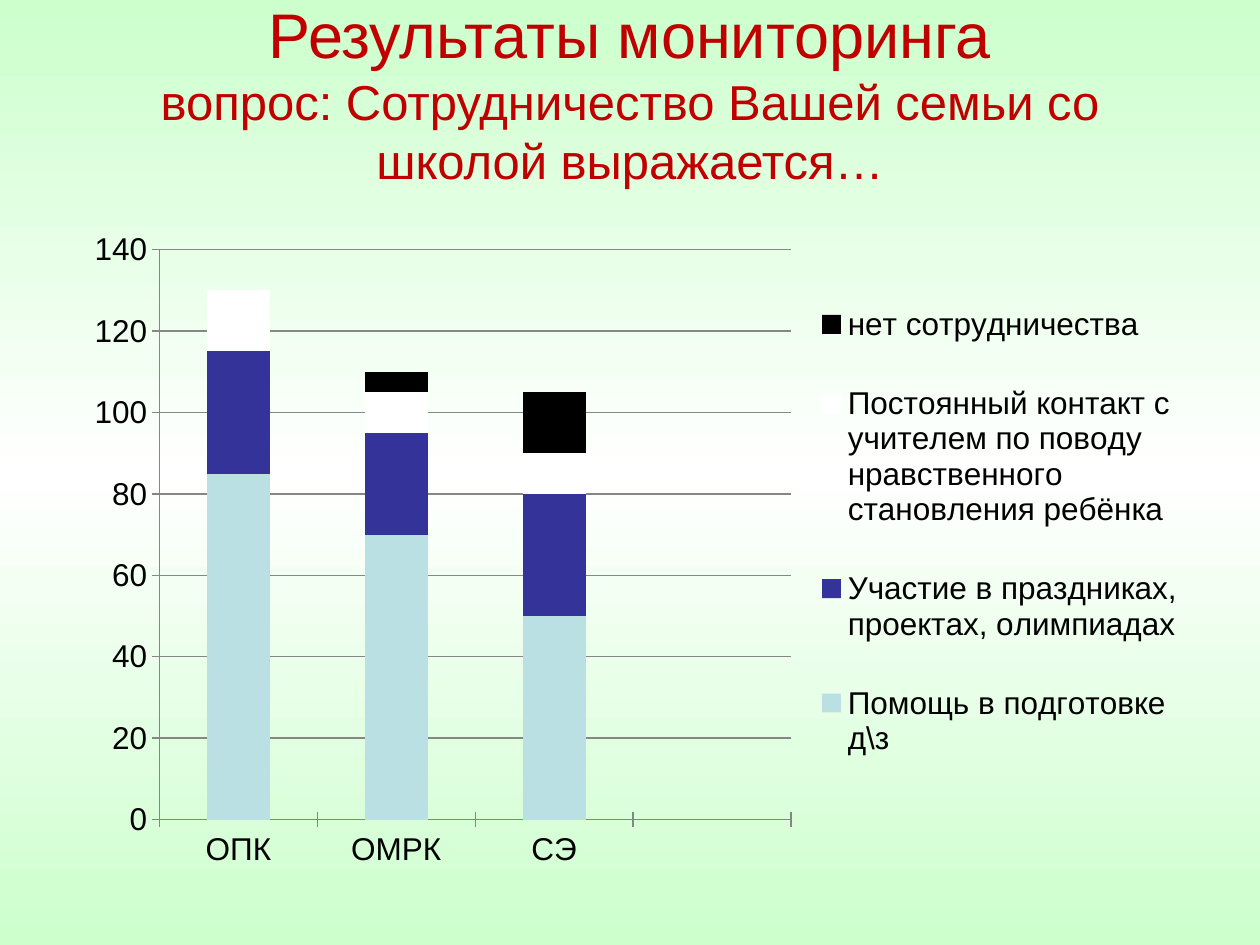
from copy import deepcopy

from lxml import etree
from pptx import Presentation
from pptx.chart.data import CategoryChartData
from pptx.dml.color import RGBColor
from pptx.enum.chart import XL_CHART_TYPE, XL_LEGEND_POSITION, XL_TICK_MARK
from pptx.enum.text import MSO_ANCHOR, MSO_AUTO_SIZE, PP_ALIGN
from pptx.oxml.ns import qn
from pptx.util import Pt

FONT = "Arial"
CATEGORIES = ["ОПК", "ОМРК", "СЭ", ""]
SERIES = [
    ("Помощь в подготовке д\\з", [85, 70, 50, None], "BBE0E3"),
    ("Участие в праздниках, проектах, олимпиадах", [30, 25, 30, None], "333399"),
    ("Постоянный контакт с учителем по поводу нравственного становления ребёнка",
     [15, 10, 10, None], "FFFFFF"),
    ("нет сотрудничества", [0, 5, 15, None], "000000"),
]


def color(value):
    return RGBColor.from_string(value)


def set_background(page):
    fill = page.background.fill
    fill.gradient()
    fill.gradient_angle = 270
    stop_list = page.background._cSld.find(".//" + qn("a:gsLst"))
    stop_list.insert(1, deepcopy(stop_list[0]))
    stops = zip(fill.gradient_stops, (0, 0.5, 1), ("CCFFCC", "FFFFFF", "CCFFCC"))
    for stop, position, value in stops:
        stop.position = position
        stop.color.rgb = color(value)


def add_title(page, box):
    title = page.shapes.title
    title.left, title.top, title.width, title.height = box
    frame = title.text_frame
    frame.text = ("Результаты мониторинга\v"
                  "вопрос: Сотрудничество Вашей семьи со школой выражается…")
    frame.word_wrap = True
    frame.auto_size = MSO_AUTO_SIZE.NONE
    frame.vertical_anchor = MSO_ANCHOR.MIDDLE
    para = frame.paragraphs[0]
    para.alignment = PP_ALIGN.CENTER
    for span, size in zip(para.runs, (36, 28)):
        span.font.name = FONT
        span.font.size = Pt(size)
        span.font.color.rgb = color("C00000")


def make_layout(x, y, w, h, inner=False):
    """Manual layout, in fractions of the chart's size."""
    layout = etree.Element(qn("c:layout"))
    manual = etree.SubElement(layout, qn("c:manualLayout"))
    settings = [("layoutTarget", "inner")] if inner else []
    settings += [("xMode", "edge"), ("yMode", "edge"),
                 ("x", x), ("y", y), ("w", w), ("h", h)]
    for name, value in settings:
        etree.SubElement(manual, qn("c:" + name)).set("val", str(value))
    return layout


def add_stacked_chart(page, box):
    data = CategoryChartData()
    data.categories = CATEGORIES
    for name, values, _ in SERIES:
        data.add_series(name, values)
    chart = page.shapes.add_chart(XL_CHART_TYPE.COLUMN_STACKED, *box, data).chart
    chart.has_title = False
    chart.font.name = FONT
    chart.font.size = Pt(18)
    chart.font.color.rgb = color("000000")

    # Columns
    plot = chart.plots[0]
    plot.vary_by_categories = False
    plot.gap_width = 150
    plot.overlap = 100
    for series, (_, _, value) in zip(plot.series, SERIES):
        series.format.fill.solid()
        series.format.fill.fore_color.rgb = color(value)

    # Axes and gridlines
    value_axis = chart.value_axis
    value_axis.minimum_scale, value_axis.maximum_scale = 0, 140
    value_axis.major_unit = 20
    value_axis.has_major_gridlines = True
    for axis in (chart.category_axis, value_axis):
        axis.major_tick_mark = XL_TICK_MARK.CROSS
    for part in (chart.category_axis, value_axis, value_axis.major_gridlines):
        part.format.line.color.rgb = color("868686")
        part.format.line.width = Pt(0.75)

    # Legend
    chart.has_legend = True
    chart.legend.position = XL_LEGEND_POSITION.RIGHT
    chart.legend.include_in_layout = False

    # Places of the plot and the legend
    plot_area = chart.element.find(".//" + qn("c:plotArea"))
    for old in plot_area.findall(qn("c:layout")):
        plot_area.remove(old)
    plot_area.insert(0, make_layout(0.08, 0.05, 0.56, 0.86, inner=True))
    legend = chart.element.find(".//" + qn("c:legend"))
    for old in legend.findall(qn("c:layout")):
        legend.remove(old)
    legend.find(qn("c:legendPos")).addnext(make_layout(0.66, 0.07, 0.33, 0.81))


def main():
    deck = Presentation()
    deck.slide_width, deck.slide_height = Pt(720), Pt(540)
    page = deck.slides.add_slide(deck.slide_layouts[5])
    set_background(page)
    add_title(page, (Pt(36), Pt(21.6), Pt(648), Pt(62.6)))
    add_stacked_chart(page, (Pt(39.6), Pt(123.8), Pt(644.4), Pt(378.7)))
    deck.save("out.pptx")


if __name__ == "__main__":
    main()
